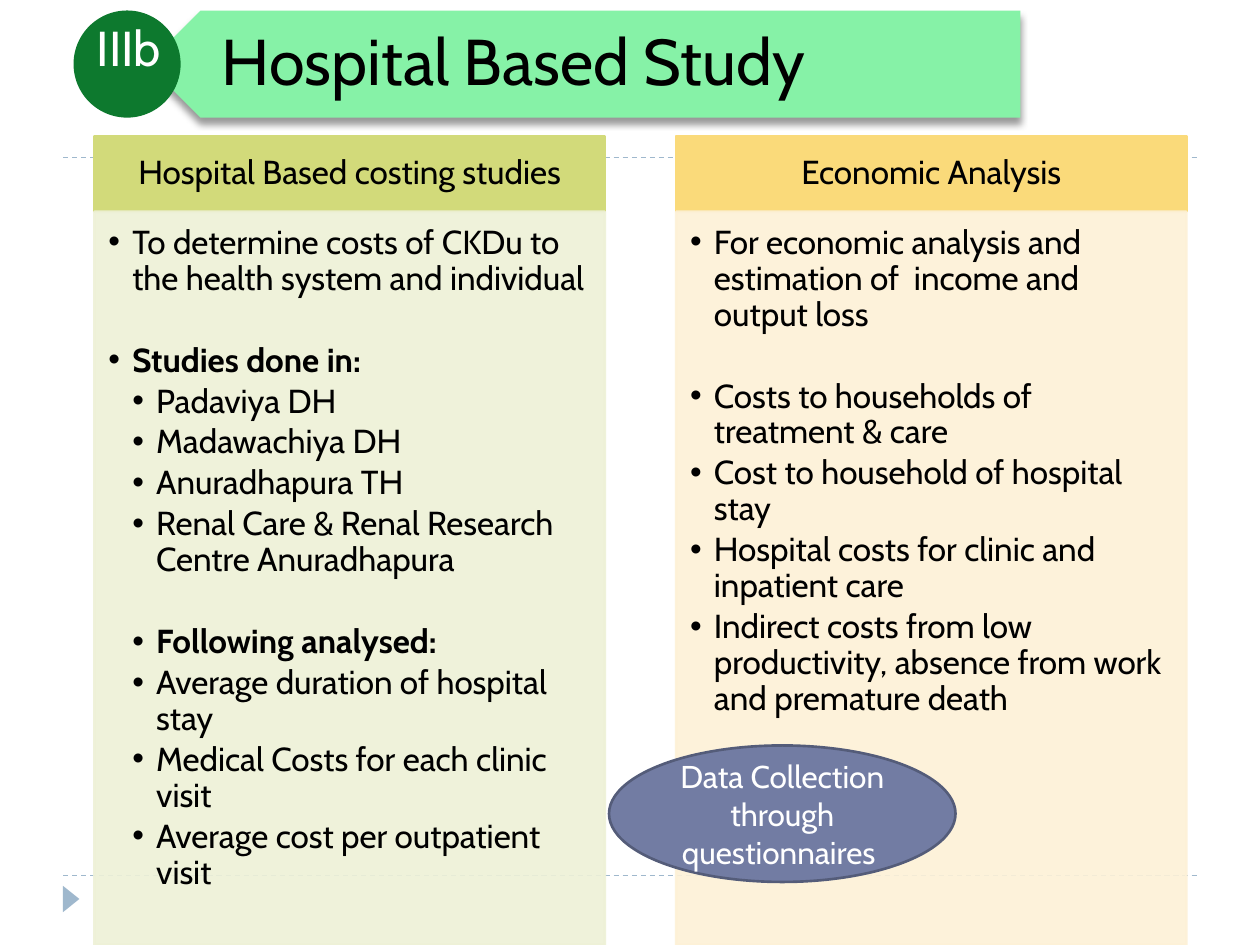
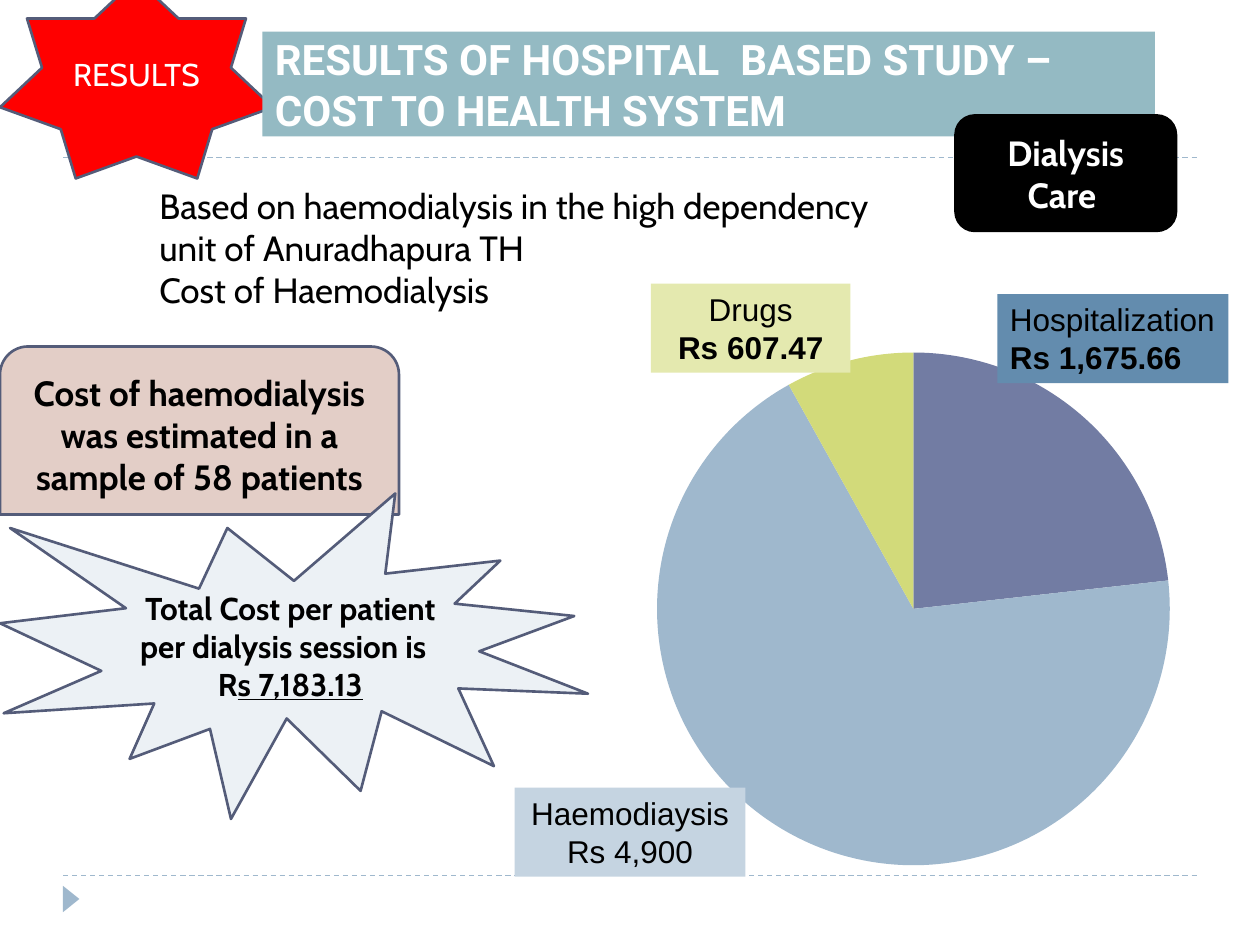
import lxml.etree
import pptx
import pptx.chart.data
import pptx.dml.color
import pptx.enum.chart
import pptx.enum.dml
import pptx.enum.shapes
import pptx.enum.text
import pptx.oxml
import pptx.oxml.ns
import pptx.util

Pt = pptx.util.Pt
RGB = pptx.dml.color.RGBColor
KIND = pptx.enum.shapes.MSO_SHAPE
ALIGN = pptx.enum.text.PP_ALIGN
ANCHOR = pptx.enum.text.MSO_ANCHOR
qn = pptx.oxml.ns.qn

BLACK = RGB(0x00, 0x00, 0x00)
WHITE = RGB(0xFF, 0xFF, 0xFF)
RED = RGB(0xFF, 0x00, 0x00)
SKY = RGB(0x9F, 0xB8, 0xCD)
SLATE = RGB(0x72, 0x7C, 0xA3)
EDGE = RGB(0x54, 0x5C, 0x79)
MINT = RGB(0x86, 0xF2, 0xA7)
GREEN = RGB(0x0D, 0x79, 0x2E)
LIME = RGB(0xD2, 0xDA, 0x7A)
LIME_PALE = RGB(0xEE, 0xF1, 0xD7)
GOLD = RGB(0xFA, 0xDA, 0x7A)
GOLD_PALE = RGB(0xFD, 0xF1, 0xD7)
TEAL = RGB(0x94, 0xBA, 0xC3)
ROSE = RGB(0xE3, 0xCE, 0xC7)
ICE = RGB(0xEC, 0xF1, 0xF5)
BLUE = RGB(0x63, 0x8C, 0xAE)
PEAR = RGB(0xE4, 0xE9, 0xAF)
MIST = RGB(0xC5, 0xD4, 0xE1)

COSTING = [
    (1, "To determine costs of CKDu to the health system and individual"),
    (1, "Studies done in:"),
    (2, "Padaviya DH"),
    (2, "Madawachiya DH"),
    (2, "Anuradhapura TH"),
    (2, "Renal Care & Renal Research Centre Anuradhapura"),
    (2, "Following analysed:"),
    (2, "Average duration of hospital stay"),
    (2, "Medical Costs for each clinic visit"),
    (2, "Average cost per outpatient visit"),
]
ECONOMY = [
    (1, "For economic analysis and estimation of  income and output loss"),
    (1, "Costs to households of treatment & care"),
    (1, "Cost to household of hospital stay"),
    (1, "Hospital costs for clinic and inpatient care"),
    (1, "Indirect costs from low productivity, absence from work and premature death"),
]


class Deck:
    """Holds the shared style and the slide being drawn."""

    font = "Cabin"
    inset = (7.2, 3.6, 7.2, 3.6)
    step = 13.68

    def __init__(self):
        self.show = pptx.Presentation()
        self.show.slide_width, self.show.slide_height = Pt(720), Pt(540)

    def start(self):
        """Add a slide with its dashed rules and corner mark."""
        slide = self.show.slides.add_slide(self.show.slide_layouts[6])
        self.items = slide.shapes
        for top in (500.4, 90):
            self.rule(36, 684, top)
        self.shape(KIND.ISOSCELES_TRIANGLE, (33.1, 509, 15.1, 9.4), SKY).rotation = 90

    def rule(self, left, right, top):
        """Draw a dashed level line."""
        rule = self.items.add_connector(
            pptx.enum.shapes.MSO_CONNECTOR.STRAIGHT, Pt(left), Pt(top), Pt(right), Pt(top))
        rule.line.color.rgb, rule.line.width = SKY, Pt(0.75)
        rule.line.dash_style = pptx.enum.dml.MSO_LINE.DASH
        lxml.etree.SubElement(rule._element.spPr, qn("a:effectLst"))

    def shape(self, kind, box, fill, line=None):
        """Draw a flat preset shape."""
        shape = self.items.add_shape(kind, *map(Pt, box))
        shape.shadow.inherit = False
        shape.fill.solid()
        shape.fill.fore_color.rgb = fill
        if line is None:
            shape.line.fill.background()
        else:
            shape.line.color.rgb, shape.line.width = line, Pt(1.5)
        return shape

    def fade(self, shape, share):
        """Make the fill and line of a shape partly clear."""
        for color in shape._element.spPr.iter(qn("a:srgbClr")):
            lxml.etree.SubElement(color, qn("a:alpha")).set("val", str(share * 1000))

    def shade(self, shape):
        """Drop a soft shadow below a shape."""
        effect = shape._element.spPr.find(qn("a:effectLst"))
        effect.append(pptx.oxml.parse_xml(
            '<a:outerShdw xmlns:a="http://schemas.openxmlformats.org/drawingml/2006/main"'
            ' blurRad="50800" dist="43180" dir="5400000" rotWithShape="0">'
            '<a:srgbClr val="000000"><a:alpha val="40000"/></a:srgbClr></a:outerShdw>'))

    def letter(self, shape, lines, size, color=BLACK, bold=False, align=ALIGN.CENTER,
               anchor=ANCHOR.MIDDLE, inset=inset, font=font, space=None):
        """Fill a shape with styled lines and return its paragraphs."""
        frame = shape.text_frame
        frame.word_wrap, frame.vertical_anchor = True, anchor
        (frame.margin_left, frame.margin_top,
         frame.margin_right, frame.margin_bottom) = map(Pt, inset)
        frame.text = "\n".join(lines)
        for para in frame.paragraphs:
            para.alignment, para.line_spacing = align, space
            for run in para.runs:
                run.font.name, run.font.size = font, Pt(size)
                run.font.bold, run.font.color.rgb = bold, color
        return frame.paragraphs

    def text(self, box, lines, size, **style):
        """Place a free text box."""
        style = {"align": ALIGN.LEFT, "anchor": ANCHOR.TOP, **style}
        return self.letter(self.items.add_textbox(*map(Pt, box)), lines, size, **style)

    def column(self, left, head, points, dark, pale, breaks=(), strong=()):
        """Draw a headed panel of bullets."""
        top = self.shape(KIND.RECTANGLE, (left, 77.75, 291.6, 43.2), dark, dark)
        self.letter(top, [head], 19, inset=(10.8, 5.8, 10.8, 5.8), space=0.9)
        body = self.shape(KIND.RECTANGLE, (left, 121, 291.6, 419), pale, pale)
        self.fade(body, 90)
        paras = self.letter(body, [point for _, point in points], 19, align=ALIGN.LEFT,
                            anchor=ANCHOR.TOP, inset=(7.9, 7.9, 10.8, 12.2), space=0.9)
        for index, (para, (level, _)) in enumerate(zip(paras, points)):
            para.space_after = Pt(26.25 if index in breaks else 2.85)
            props = para._p.get_or_add_pPr()
            props.set("marL", str(Pt(level * self.step)))
            props.set("indent", str(Pt(-self.step)))
            lxml.etree.SubElement(props, qn("a:buFont")).set("typeface", "Arial")
            lxml.etree.SubElement(props, qn("a:buChar")).set("char", "•")
            para.runs[0].font.bold = index in strong

    def label(self, box, name, cost, fill, bold=True, align=ALIGN.CENTER):
        """Name a slice and its cost."""
        tag = self.shape(KIND.RECTANGLE, box, fill)
        paras = self.letter(tag, [name, cost], 18, align=align,
                            anchor=ANCHOR.TOP, font="Arial")
        paras[1].runs[0].font.bold = bold

    def pie(self, box, names, values, colors):
        """Draw a bare pie chart."""
        data = pptx.chart.data.CategoryChartData()
        data.categories = names
        data.add_series("Series 1", values)
        chart = self.items.add_chart(
            pptx.enum.chart.XL_CHART_TYPE.PIE, *map(Pt, box), data).chart
        chart.has_legend = chart.has_title = False
        chart.font.name, chart.font.size = self.font, Pt(18)
        chart.font.color.rgb = BLACK
        plot = chart.plots[0]
        plot.vary_by_categories = True
        for index, color in enumerate(colors):
            fill = plot.series[0].points[index].format.fill
            fill.solid()
            fill.fore_color.rgb = color
        self.fit(chart)

    def fit(self, chart):
        """Clear the chart ground and set the plot size."""
        root = chart._chartSpace
        ground = lxml.etree.Element(qn("c:spPr"))
        lxml.etree.SubElement(ground, qn("a:noFill"))
        edge = lxml.etree.SubElement(ground, qn("a:ln"))
        lxml.etree.SubElement(edge, qn("a:noFill"))
        root.find(qn("c:txPr")).addprevious(ground)
        area = root.find(".//" + qn("c:plotArea"))
        for old in area.findall(qn("c:layout")):
            area.remove(old)
        layout = lxml.etree.Element(qn("c:layout"))
        area.insert(0, layout)
        manual = lxml.etree.SubElement(layout, qn("c:manualLayout"))
        for key, value in (("layoutTarget", "inner"), ("xMode", "edge"), ("yMode", "edge"),
                           ("x", "0.13"), ("y", "0.03"), ("w", "0.74"), ("h", "0.94")):
            lxml.etree.SubElement(manual, qn("c:" + key)).set("val", value)


def study(deck):
    """Build the slide on the study plan."""
    deck.start()
    band = deck.shape(KIND.PENTAGON, (84, 6, 499, 61.2), MINT)
    band.rotation = 180
    deck.shade(band)
    deck.text((99.4, 6, 483.2, 61.2), ["Hospital Based Study"], 37, anchor=ANCHOR.MIDDLE,
              inset=(27.4, 10.8, 20.9, 10.8), space=0.9)
    deck.shape(KIND.OVAL, (42, 6, 61.2, 61.2), GREEN)
    deck.text((48.2, 6.5, 54, 41), ["IIIb"], 28, color=WHITE)
    deck.column(54, "Hospital Based costing studies", COSTING, LIME, LIME_PALE,
                breaks=(0, 5), strong=(1, 6))
    deck.column(386.4, "Economic Analysis", ECONOMY, GOLD, GOLD_PALE, breaks=(0,))
    oval = deck.shape(KIND.OVAL, (348, 426, 198, 78), SLATE, EDGE)
    deck.letter(oval, ["Data Collection through questionnaires "], 18, WHITE)


def results(deck):
    """Build the slide on dialysis costs."""
    deck.start()
    star = deck.shape(KIND.STAR_7_POINT, (0, -12, 156, 114), RED, EDGE)
    deck.letter(star, ["RESULTS"], 18, WHITE)
    band = deck.shape(KIND.RECTANGLE, (150, 18, 510, 60), TEAL)
    deck.letter(band, ["RESULTS OF HOSPITAL  BASED STUDY – COST TO HEALTH SYSTEM"], 24,
                WHITE, True, ALIGN.LEFT, font="Roboto")
    sample = deck.shape(KIND.ROUND_2_SAME_RECTANGLE, (0, 198, 228, 96), ROSE, EDGE)
    deck.letter(sample, ["Cost of haemodialysis was estimated in a sample of 58 patients"],
                20, bold=True)
    care = deck.shape(KIND.ROUNDED_RECTANGLE, (546, 66, 126, 66), BLACK, BLACK)
    deck.letter(care, ["Dialysis Care "], 20, WHITE, True)
    deck.text((84, 102, 456, 80), [
        "Based on haemodialysis in the high dependency unit of Anuradhapura TH",
        "Cost of Haemodialysis"], 20)
    burst = deck.shape(KIND.EXPLOSION1, (0, 282, 336, 186), ICE, EDGE)
    total = deck.letter(burst, ["Total Cost per patient per dialysis session is  ", "R"],
                        18, bold=True)[1]
    run = total.add_run()
    run.text = "s 7,183.13"
    run.font.name, run.font.size = deck.font, Pt(18)
    run.font.bold = run.font.underline = True
    run.font.color.rgb = BLACK
    deck.pie((324, 192, 396, 312), ["1", "2", "3"], (23, 68, 8), (SLATE, SKY, LIME))
    deck.label((570, 168, 132, 51), "Hospitalization", "Rs 1,675.66", BLUE, align=ALIGN.LEFT)
    deck.label((372, 162, 114, 51), "Drugs", "Rs 607.47", PEAR)
    deck.label((294, 450, 132, 51), "Haemodiaysis", "Rs 4,900", MIST, bold=False)


def main():
    """Build and save the deck."""
    deck = Deck()
    study(deck)
    results(deck)
    deck.show.save("out.pptx")


if __name__ == "__main__":
    main()
